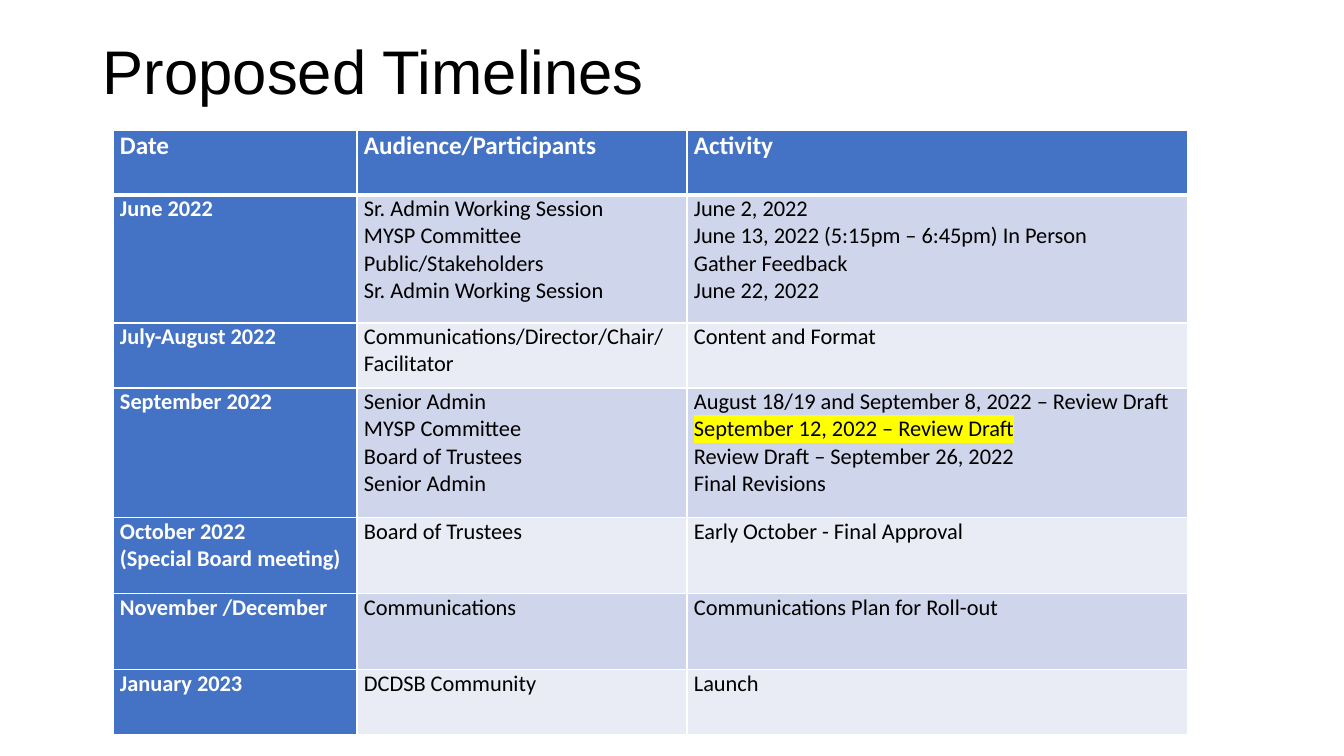
"""Builds the slide of proposed timelines with its schedule table."""
from dataclasses import dataclass

from lxml.etree import SubElement
from pptx import Presentation
from pptx.dml.color import RGBColor
from pptx.enum.text import MSO_ANCHOR
from pptx.oxml import parse_xml
from pptx.oxml.ns import nsdecls, qn
from pptx.util import Emu, Pt


@dataclass(frozen=True)
class Theme:
    """Colours, fonts and type sizes of the slide."""
    ink: str = "000000"
    white: str = "FFFFFF"
    blue: str = "4472C4"
    bands: tuple = ("CFD5EA", "E9EBF5")
    marker: str = "FFFF00"
    title_font: str = "Arial"
    table_font: str = "Calibri"
    title_size: int = 44
    header_size: int = 18
    body_size: int = 16


THEME = Theme()
HEADER = (["Date"], ["Audience/Participants"], ["Activity"])
MARKED = "September 12, 2022 – Review Draft"
SCHEDULE = [
    (["June 2022"],
     ["Sr. Admin Working Session", "MYSP Committee", "Public/Stakeholders", "Sr. Admin Working Session"],
     ["June 2, 2022", "June 13, 2022 (5:15pm – 6:45pm) In Person", "Gather Feedback", "June 22, 2022"]),
    (["July-August 2022"],
     ["Communications/Director/Chair/", "Facilitator"],
     ["Content and Format"]),
    (["September 2022"],
     ["Senior Admin", "MYSP Committee", "Board of Trustees", "Senior Admin"],
     ["August 18/19 and September 8, 2022 – Review Draft", MARKED,
      "Review Draft – September 26, 2022", "Final Revisions"]),
    (["October 2022", "(Special Board meeting)"],
     ["Board of Trustees"],
     ["Early October - Final Approval"]),
    (["November /December"], ["Communications"], ["Communications Plan for Roll-out"]),
    (["January 2023"], ["DCDSB Community"], ["Launch"]),
]
COLUMN_WIDTHS = (244, 330, 501)
ROW_HEIGHTS = (65, 128, 65, 130, 76, 76, 65)


def px(length):
    """Turns pixels into EMU."""
    return Emu(round(length * 914400 / 100.8))


def add_span(para, text, font, size, color, bold=False):
    """Adds one styled run to a paragraph."""
    span = para.add_run()
    span.text = text
    span.font.name = font
    span.font.size = Pt(size)
    span.font.bold = bold
    span.font.color.rgb = RGBColor.from_string(color)
    return span


def highlight(span, color):
    """Puts a marker colour behind a run."""
    mark = parse_xml(f'<a:highlight {nsdecls("a")}><a:srgbClr val="{color}"/></a:highlight>')
    span._r.get_or_add_rPr().find(qn("a:solidFill")).addnext(mark)


def set_borders(cell, top, bottom):
    """Draws white borders, with top and bottom widths in points."""
    properties = cell._tc.get_or_add_tcPr()
    for index, (side, width) in enumerate((("L", 1), ("R", 1), ("T", top), ("B", bottom))):
        line = parse_xml(f'<a:ln{side} {nsdecls("a")} w="{Pt(width)}"/>')
        fill = SubElement(line, qn("a:solidFill"))
        SubElement(fill, qn("a:srgbClr"), val=THEME.white)
        properties.insert(index, line)


def fill_cell(cell, lines, fill, size, color, bold):
    """Colours a cell and writes one paragraph for each line."""
    cell.fill.solid()
    cell.fill.fore_color.rgb = RGBColor.from_string(fill)
    cell.margin_left = cell.margin_right = px(7)
    cell.margin_top = cell.margin_bottom = 0
    cell.vertical_anchor = MSO_ANCHOR.TOP
    frame = cell.text_frame
    for index, text in enumerate(lines):
        para = frame.add_paragraph() if index else frame.paragraphs[0]
        span = add_span(para, text, THEME.table_font, size, color, bold)
        if text == MARKED:
            highlight(span, THEME.marker)


def add_title(page, text):
    """Adds the slide heading."""
    box = page.shapes.add_textbox(px(93), px(2), px(1159), px(146))
    frame = box.text_frame
    frame.word_wrap = True
    frame.vertical_anchor = MSO_ANCHOR.MIDDLE
    para = frame.paragraphs[0]
    para.line_spacing = 0.9
    add_span(para, text, THEME.title_font, THEME.title_size, THEME.ink)


def add_schedule(page):
    """Adds the table of dates, participants and activities."""
    rows = [HEADER, *SCHEDULE]
    frame = page.shapes.add_table(len(rows), len(HEADER), px(113), px(130),
                                  px(sum(COLUMN_WIDTHS)), px(sum(ROW_HEIGHTS)))
    table = frame.table
    for column, width in zip(table.columns, COLUMN_WIDTHS):
        column.width = px(width)
    for row_index, (row, height) in enumerate(zip(rows, ROW_HEIGHTS)):
        table.rows[row_index].height = px(height)
        is_header = row_index == 0
        size = THEME.header_size if is_header else THEME.body_size
        for column_index, lines in enumerate(row):
            cell = table.cell(row_index, column_index)
            strong = is_header or column_index == 0
            fill = THEME.blue if strong else THEME.bands[(row_index - 1) % 2]
            fill_cell(cell, lines, fill, size, THEME.white if strong else THEME.ink, strong)
            set_borders(cell, 3 if row_index == 1 else 1, 3 if is_header else 1)


def main():
    """Builds and saves the deck."""
    deck = Presentation()
    deck.slide_width, deck.slide_height = px(1344), px(756)
    page = deck.slides.add_slide(deck.slide_layouts[6])
    add_title(page, "Proposed Timelines")
    add_schedule(page)
    deck.save("out.pptx")


if __name__ == "__main__":
    main()
